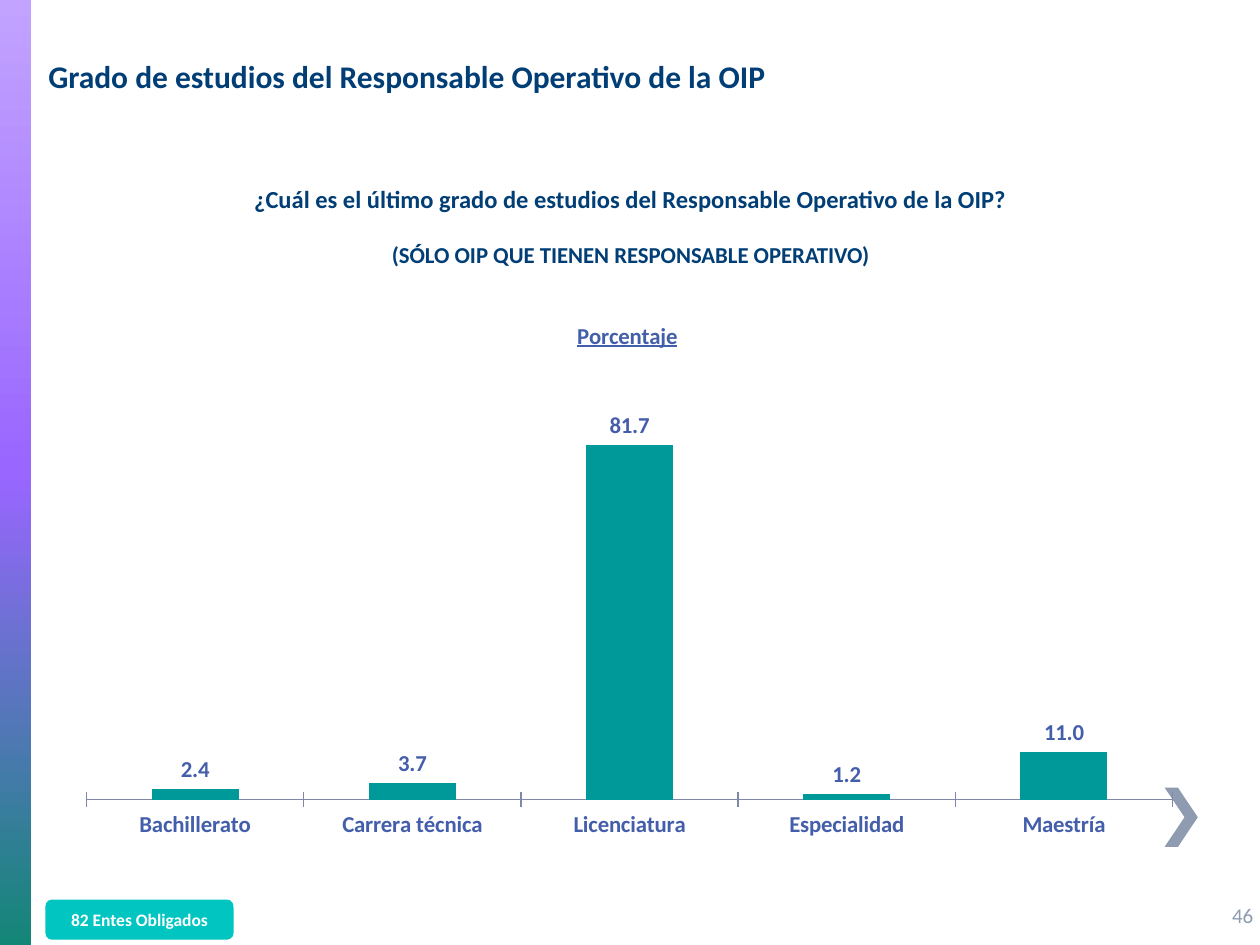
import copy
import pptx
import pptx.util
import pptx.chart.data
import pptx.dml.color
import pptx.enum.chart
import pptx.enum.shapes
import pptx.enum.text
import pptx.oxml
import pptx.oxml.ns

Pt = pptx.util.Pt
ALIGN = pptx.enum.text.PP_ALIGN
ANCHOR = pptx.enum.text.MSO_ANCHOR
SHAPE = pptx.enum.shapes.MSO_SHAPE
NAVY = "003E75"
GREY = "8E9BB0"


def color(value):
    return pptx.dml.color.RGBColor.from_string(value)


def points(box):
    return [Pt(length) for length in box]


def style_font(font, size, value, **formats):
    formats = {"name": "Calibri", "size": Pt(size), "bold": True, **formats}
    for name, setting in formats.items():
        setattr(font, name, setting)
    font.color.rgb = color(value)


def fill_text(shape, lines, value, anchor=ANCHOR.TOP, align=ALIGN.LEFT, gap=0, **formats):
    frame = shape.text_frame
    frame.word_wrap = True
    frame.vertical_anchor = anchor
    for index, (text, size) in enumerate(lines):
        paragraph = frame.add_paragraph() if index else frame.paragraphs[0]
        paragraph.alignment = align
        if index:
            paragraph.space_before = Pt(gap)
        run = paragraph.add_run()
        run.text = text
        style_font(run.font, size, value, **formats)


def add_text(slide, box, lines, value, **formats):
    shape = slide.shapes.add_textbox(*points(box))
    fill_text(shape, lines, value, **formats)


def add_side_band(slide, box):
    shape = slide.shapes.add_shape(SHAPE.RECTANGLE, *points(box))
    shape.shadow.inherit = False
    shape.line.fill.background()
    shape.fill.gradient()
    shape.fill.gradient_angle = 270
    first = shape.fill._xPr.find(".//" + pptx.oxml.ns.qn("a:gs"))
    first.addnext(copy.deepcopy(first))
    stops = [(0, "C2A3FF"), (0.5, "9966FF"), (1, "138677")]
    for stop, (position, value) in zip(shape.fill.gradient_stops, stops):
        stop.position = position
        stop.color.rgb = color(value)


def add_chevron(slide, box):
    left, top, width, height = box
    outline = [(0.4, 0), (1, 0.5), (0.4, 1), (0, 1), (0.6, 0.5)]
    corners = [(Pt(left + width * x), Pt(top + height * y)) for x, y in outline]
    builder = slide.shapes.build_freeform(Pt(left), Pt(top))
    builder.add_line_segments(corners, close=True)
    shape = builder.convert_to_shape()
    shape.shadow.inherit = False
    shape.fill.solid()
    shape.fill.fore_color.rgb = color(GREY)
    shape.line.fill.background()


def add_badge(slide, box, text):
    shape = slide.shapes.add_shape(SHAPE.ROUNDED_RECTANGLE, *points(box))
    shape.shadow.inherit = False
    shape.fill.solid()
    shape.fill.fore_color.rgb = color("00C5C0")
    shape.line.fill.background()
    fill_text(shape, [(text, 10)], "FFFFFF", anchor=ANCHOR.MIDDLE, align=ALIGN.CENTER)


def manual_layout(target, **places):
    modes = "".join(f'<c:{axis}Mode val="edge"/>' for axis in "xy")
    values = "".join(f'<c:{name} val="{place}"/>' for name, place in places.items())
    inner = '<c:layoutTarget val="inner"/>' if "w" in places else ""
    return pptx.oxml.parse_xml(
        f'<c:layout {pptx.oxml.ns.nsdecls("c")}><c:manualLayout>'
        f"{inner}{modes}{values}</c:manualLayout></c:layout>"
    )


def place(parent, after, **places):
    for layout in parent.findall(pptx.oxml.ns.qn("c:layout")):
        parent.remove(layout)
    layout = manual_layout(parent, **places)
    if after is None:
        parent.insert(0, layout)
    else:
        after.addnext(layout)


def add_degree_chart(slide, box):
    kinds = pptx.enum.chart
    text_color = "435EAA"
    data = pptx.chart.data.CategoryChartData(number_format="###0.0")
    data.categories = ["Bachillerato", "Carrera técnica", "Licenciatura", "Especialidad", "Maestría"]
    data.add_series("Porcentaje", [2.4, 3.7, 81.7, 1.2, 11.0])
    chart = slide.shapes.add_chart(kinds.XL_CHART_TYPE.COLUMN_CLUSTERED, *points(box), data).chart
    style_font(chart.font, 13, text_color)
    chart.has_legend = False
    chart.has_title = True
    title = chart.chart_title
    run = title.text_frame.paragraphs[0].add_run()
    run.text = "Porcentaje"
    style_font(run.font, 13, text_color, underline=True)
    title.include_in_layout = False
    title_xml = title._element
    place(title_xml, title_xml.find(pptx.oxml.ns.qn("c:tx")), x=0.45, y=0.04)
    plot_area = chart._chartSpace.chart.plotArea
    place(plot_area, None, x=0.02, y=0.13, w=0.96, h=0.78)

    value_axis = chart.value_axis
    value_formats = {
        "minimum_scale": 0,
        "maximum_scale": 100,
        "major_unit": 10,
        "has_major_gridlines": False,
        "visible": False,
    }
    for name, setting in value_formats.items():
        setattr(value_axis, name, setting)
    category_axis = chart.category_axis
    category_axis.major_tick_mark = kinds.XL_TICK_MARK.CROSS
    category_axis.format.line.color.rgb = color("8088A8")
    category_axis.format.line.width = Pt(0.75)

    plot = chart.plots[0]
    plot.vary_by_categories = False
    plot.gap_width = 150
    plot.overlap = -25
    plot.has_data_labels = True
    label_formats = {
        "show_value": True,
        "number_format": "###0.0",
        "number_format_is_linked": False,
        "position": kinds.XL_LABEL_POSITION.OUTSIDE_END,
    }
    for name, setting in label_formats.items():
        setattr(plot.data_labels, name, setting)
    style_font(plot.data_labels.font, 13, text_color)
    series = plot.series[0]
    series.invert_if_negative = False
    series.format.fill.solid()
    series.format.fill.fore_color.rgb = color("009999")


def main():
    presentation = pptx.Presentation()
    presentation.slide_width, presentation.slide_height = Pt(720), Pt(540)
    slide = presentation.slides.add_slide(presentation.slide_layouts[6])
    add_side_band(slide, (0, 0, 18, 540))
    add_chevron(slide, (665.5, 450, 19, 34))
    add_text(slide, (697, 508.5, 30, 29), [("46", 12)], GREY, anchor=ANCHOR.MIDDLE, bold=False)
    question = [
        ("¿Cuál es el último grado de estudios del Responsable Operativo de la OIP?", 14),
        ("(SÓLO OIP QUE TIENEN RESPONSABLE OPERATIVO)", 13),
    ]
    add_text(slide, (28, 101.5, 664.5, 55.5), question, NAVY, align=ALIGN.CENTER, gap=16)
    add_degree_chart(slide, (36.5, 168, 646.5, 317.5))
    heading = [("Grado de estudios del Responsable Operativo de la OIP", 18)]
    add_text(slide, (20.5, 9.5, 669, 68), heading, NAVY, anchor=ANCHOR.MIDDLE)
    add_badge(slide, (26, 514, 107.5, 23), "82 Entes Obligados")
    presentation.save("out.pptx")


if __name__ == "__main__":
    main()
